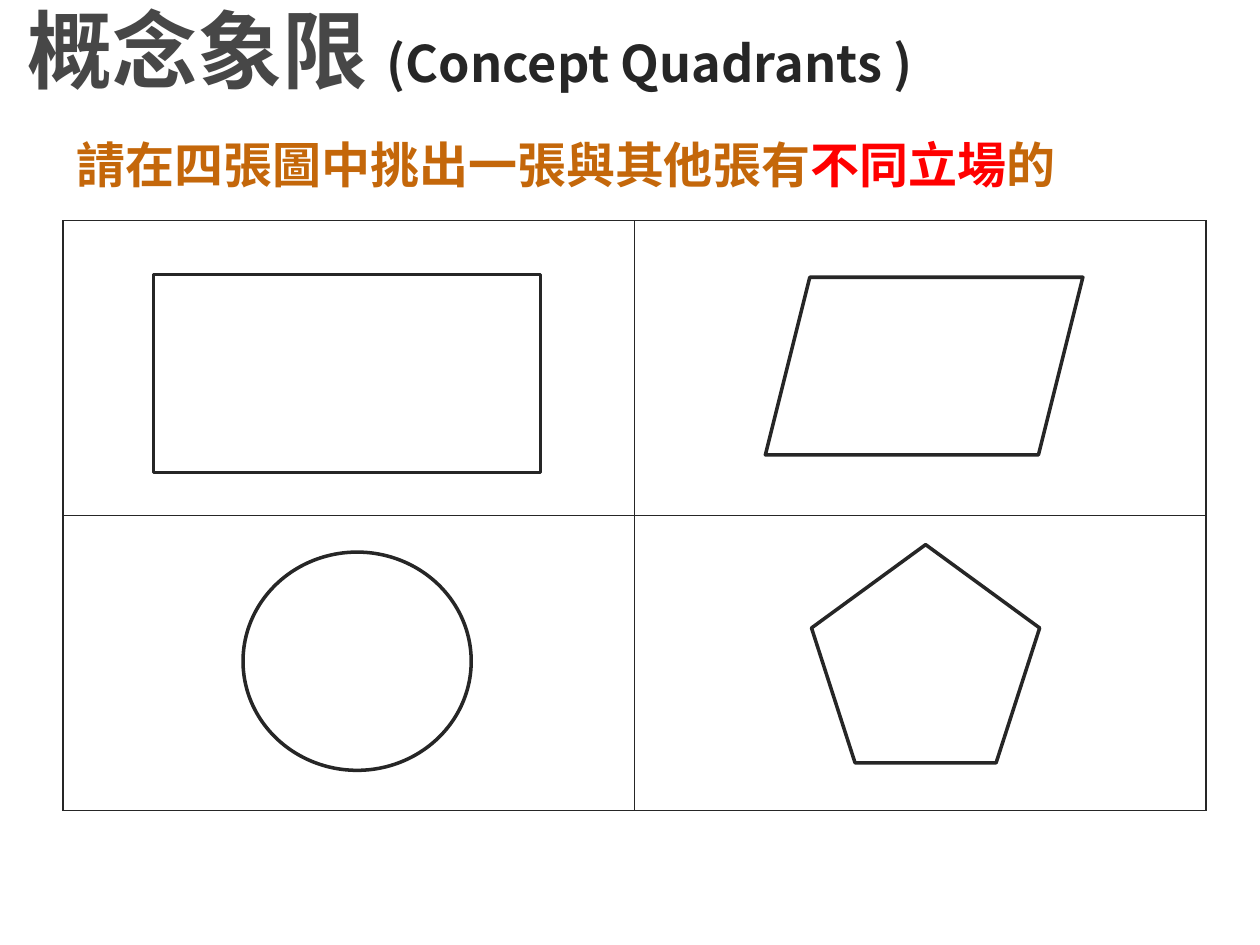
from typing import NamedTuple

import pptx
import pptx.dml.color
import pptx.enum.shapes
import pptx.enum.text
import pptx.oxml
import pptx.oxml.ns
import pptx.util

Cm = pptx.util.Cm
Pt = pptx.util.Pt
RGBColor = pptx.dml.color.RGBColor
MSO_SHAPE = pptx.enum.shapes.MSO_SHAPE
MSO_ANCHOR = pptx.enum.text.MSO_ANCHOR

INK = RGBColor(0x26, 0x26, 0x26)
GREY = RGBColor(0x47, 0x47, 0x47)
ORANGE = RGBColor(0xC4, 0x67, 0x0A)
RED = RGBColor(0xFF, 0x00, 0x00)
FONT = "Noto Sans CJK SC"


class Box(NamedTuple):
    left: float
    top: float
    width: float
    height: float

    def lengths(self) -> list:
        return [Cm(value) for value in self]


class Phrase(NamedTuple):
    text: str
    size: float
    color: RGBColor


class Figure(NamedTuple):
    kind: MSO_SHAPE
    box: Box


TITLE = [
    Phrase("概念象限 ", 48.6, GREY),
    Phrase("(Concept Quadrants )", 28.8, INK),
]
QUESTION = [
    Phrase("請在四張圖中挑出一張與其他張有", 28, ORANGE),
    Phrase("不同立場", 28, RED),
    Phrase("的", 28, ORANGE),
]
FIGURES = [
    Figure(MSO_SHAPE.RECTANGLE, Box(3.1, 5.53, 7.8, 4)),
    Figure(MSO_SHAPE.OVAL, Box(4.9, 11.13, 4.6, 4.4)),
    Figure(MSO_SHAPE.PARALLELOGRAM, Box(15.43, 5.59, 6.4, 3.58)),
    Figure(MSO_SHAPE.REGULAR_PENTAGON, Box(16.36, 10.98, 4.6, 4.4)),
]


def set_values(target: object, values: dict) -> None:
    for name, value in values.items():
        setattr(target, name, value)


def add_line_of_text(slide, box: Box, phrases: list[Phrase], frame_format: dict, spacing: float) -> None:
    frame = slide.shapes.add_textbox(*box.lengths()).text_frame
    set_values(frame, frame_format)
    paragraph = frame.paragraphs[0]
    paragraph.line_spacing = spacing
    for phrase in phrases:
        run = paragraph.add_run()
        run.text = phrase.text
        set_values(run.font, {"name": FONT, "size": Pt(phrase.size), "bold": True})
        run.font.color.rgb = phrase.color
        east_asian = pptx.oxml.parse_xml(
            f'<a:ea {pptx.oxml.ns.nsdecls("a")} typeface="{FONT}"/>')
        run.font._element.find(pptx.oxml.ns.qn("a:latin")).addnext(east_asian)


def add_quadrants(slide, box: Box) -> None:
    table = slide.shapes.add_table(2, 2, *box.lengths()).table
    set_values(table, {"first_row": False, "horz_banding": False})
    for cell in table.iter_cells():
        cell.fill.background()
        properties = cell._tc.get_or_add_tcPr()
        for index, side in enumerate(("lnL", "lnR", "lnT", "lnB")):
            border = pptx.oxml.parse_xml(
                f'<a:{side} {pptx.oxml.ns.nsdecls("a")} w="{Pt(1)}">'
                f'<a:solidFill><a:srgbClr val="{INK}"/></a:solidFill></a:{side}>')
            properties.insert(index, border)


def add_figure(slide, figure: Figure) -> None:
    shape = slide.shapes.add_shape(figure.kind, *figure.box.lengths())
    shape.shadow.inherit = False
    shape.fill.background()
    shape.line.color.rgb = INK
    shape.line.width = Pt(2)


def main() -> None:
    deck = pptx.Presentation()
    set_values(deck, {"slide_width": Cm(25.4), "slide_height": Cm(19.05)})
    slide = deck.slides.add_slide(deck.slide_layouts[6])

    # Heading and question
    add_line_of_text(slide, Box(0.3, 0.13, 23.34, 1.9), TITLE,
                     {"word_wrap": True, "vertical_anchor": MSO_ANCHOR.MIDDLE}, 0.95)
    add_line_of_text(slide, Box(1.3, 2.72, 20.47, 1.45), QUESTION,
                     {"word_wrap": False, "vertical_anchor": MSO_ANCHOR.TOP}, 0.9)

    # Four quadrants with one figure each
    add_quadrants(slide, Box(1.27, 4.45, 23.04, 11.89))
    for figure in FIGURES:
        add_figure(slide, figure)

    deck.save("out.pptx")


if __name__ == "__main__":
    main()
